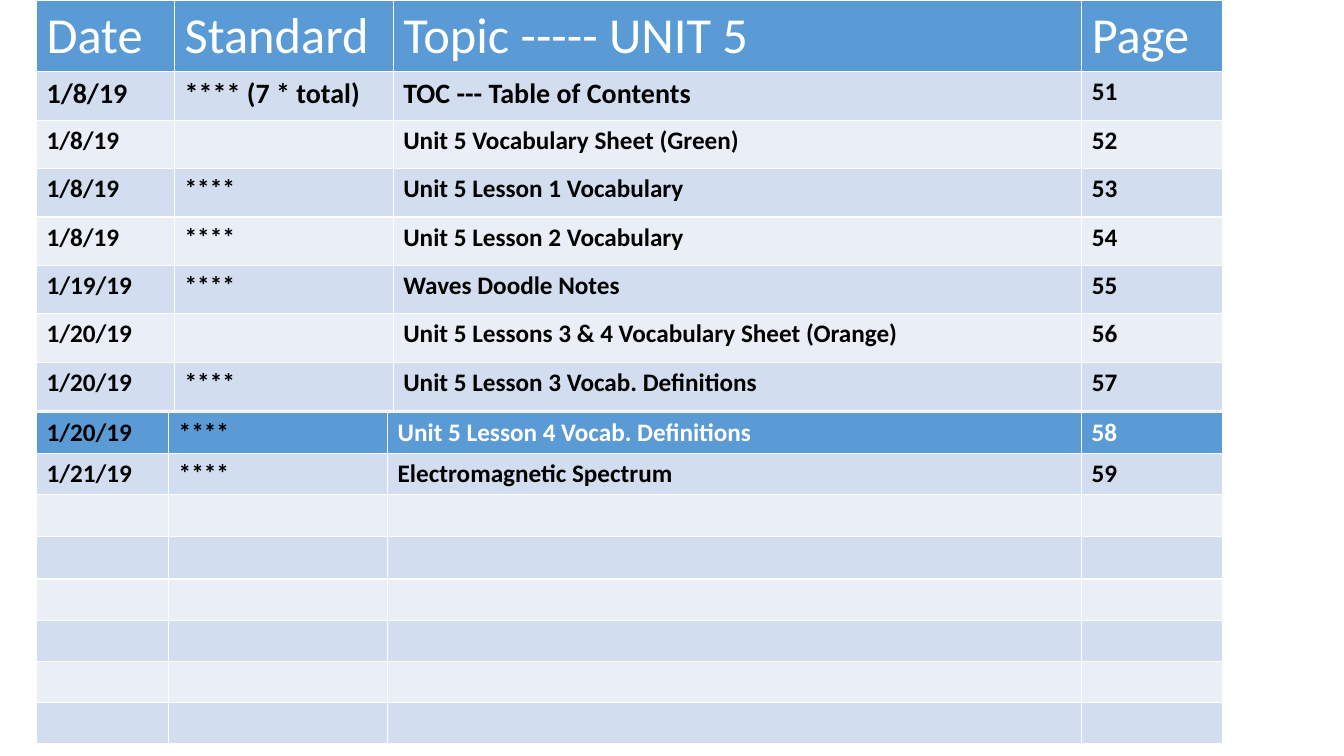
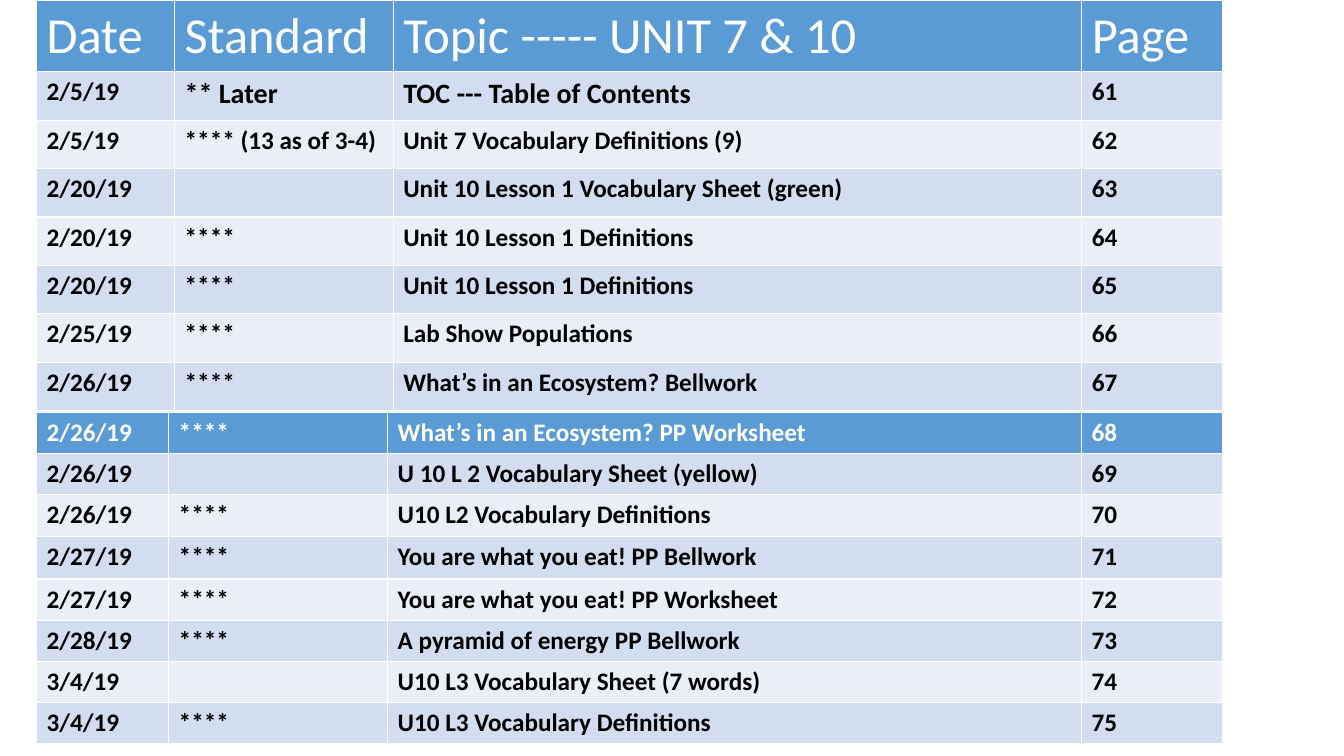
from lxml import etree
from pptx import Presentation
from pptx.dml.color import RGBColor
from pptx.oxml import ns
from pptx.util import Cm, Pt

# Shared look
FONT = "Calibri"
WHITE = RGBColor(0xFF, 0xFF, 0xFF)
BLACK = RGBColor(0x00, 0x00, 0x00)
HEADER_BLUE = RGBColor(0x5B, 0x9B, 0xD5)
BANDS = (RGBColor(0xD2, 0xDE, 0xEF), RGBColor(0xEA, 0xEF, 0xF7))
HEADING_SIZE, LEAD_SIZE, ENTRY_SIZE = 36, 20, 18
BORDER = Pt(1)

# Shared layout, in centimetres
LEFT = 0.92
UPPER = {"top": 0, "columns": (3.48, 5.51, 17.35, 3.56),
         "rows": [1.78] + [1.22] * 8}
LOWER = {"top": 10.39, "columns": (3.33, 5.52, 17.49, 3.56),
         "rows": [1.04] * 3 + [1.08] + [1.04] * 4}
UPPER_ENTRIES = 7

# Content: entries are (date, standard, topic), pages count up from first_page;
# lead_cells are the larger cells of the first entry,
# dark_cells the black ones in the lower table's blue row
UNITS = [
    {
        "title": "Topic ----- UNIT 5",
        "first_page": 51,
        "lead_cells": (0, 1, 2),
        "dark_cells": (0, 1),
        "entries": [
            ("1/8/19", "**** (7 * total)", "TOC --- Table of Contents"),
            ("1/8/19", "", "Unit 5 Vocabulary Sheet (Green)"),
            ("1/8/19", "****", "Unit 5 Lesson 1 Vocabulary"),
            ("1/8/19", "****", "Unit 5 Lesson 2 Vocabulary"),
            ("1/19/19", "****", "Waves Doodle Notes"),
            ("1/20/19", "", "Unit 5 Lessons 3 & 4 Vocabulary Sheet (Orange)"),
            ("1/20/19", "****", "Unit 5 Lesson 3 Vocab. Definitions"),
            ("1/20/19", "****", "Unit 5 Lesson 4 Vocab. Definitions"),
            ("1/21/19", "****", "Electromagnetic Spectrum"),
        ],
    },
    {
        "title": "Topic ----- UNIT 7 & 10",
        "first_page": 61,
        "lead_cells": (1, 2),
        "dark_cells": (),
        "entries": [
            ("2/5/19", "** Later", "TOC --- Table of Contents"),
            ("2/5/19", "**** (13 as of 3-4)", "Unit 7 Vocabulary Definitions (9)"),
            ("2/20/19", "", "Unit 10 Lesson 1 Vocabulary Sheet (green)"),
            ("2/20/19", "****", "Unit 10 Lesson 1 Definitions"),
            ("2/20/19", "****", "Unit 10 Lesson 1 Definitions"),
            ("2/25/19", "****", "Lab Show Populations"),
            ("2/26/19", "****", "What’s in an Ecosystem? Bellwork"),
            ("2/26/19", "****", "What’s in an Ecosystem? PP Worksheet"),
            ("2/26/19", "", "U 10 L 2 Vocabulary Sheet (yellow)"),
            ("2/26/19", "****", "U10 L2 Vocabulary Definitions"),
            ("2/27/19", "****", "You are what you eat! PP Bellwork"),
            ("2/27/19", "****", "You are what you eat! PP Worksheet"),
            ("2/28/19", "****", "A pyramid of energy PP Bellwork"),
            ("3/4/19", "", "U10 L3 Vocabulary Sheet (7 words)"),
            ("3/4/19", "****", "U10 L3 Vocabulary Definitions"),
        ],
    },
]


def add_borders(cell):
    properties = cell._tc.get_or_add_tcPr()
    for side in "LRTB":
        line = etree.SubElement(properties, ns.qn(f"a:ln{side}"), w=str(int(BORDER)))
        fill = etree.SubElement(line, ns.qn("a:solidFill"))
        etree.SubElement(fill, ns.qn("a:srgbClr"), val=str(WHITE))


def write_cell(cell, words, size, color, bold):
    paragraph = cell.text_frame.paragraphs[0]
    paragraph.text = words
    for run in paragraph.runs:
        run.font.name = FONT
        run.font.size = Pt(size)
        run.font.bold = bold
        run.font.color.rgb = color


def add_listing(slide, layout, rows, text_style):
    """Draw one table; text_style(row, column) gives size, colour and bold."""
    widths, heights = layout["columns"], layout["rows"]
    listing = slide.shapes.add_table(
        len(heights), len(widths), Cm(LEFT), Cm(layout["top"]),
        Cm(sum(widths)), Cm(sum(heights))).table
    listing.first_row = listing.horz_banding = False
    for column, width in zip(listing.columns, widths):
        column.width = Cm(width)
    for r, height in enumerate(heights):
        listing.rows[r].height = Cm(height)
        for c in range(len(widths)):
            cell = listing.cell(r, c)
            add_borders(cell)
            cell.fill.solid()
            cell.fill.fore_color.rgb = BANDS[(r - 1) % 2] if r else HEADER_BLUE
            if r < len(rows) and rows[r][c]:
                write_cell(cell, rows[r][c], *text_style(r, c))


def add_contents_slide(deck, unit):
    slide = deck.slides.add_slide(deck.slide_layouts[6])
    entries = [(*entry, str(page))
               for page, entry in enumerate(unit["entries"], unit["first_page"])]

    def upper_style(r, c):
        if r == 0:
            return HEADING_SIZE, WHITE, False
        is_lead = r == 1 and c in unit["lead_cells"]
        return LEAD_SIZE if is_lead else ENTRY_SIZE, BLACK, True

    def lower_style(r, c):
        is_dark = r > 0 or c in unit["dark_cells"]
        return ENTRY_SIZE, BLACK if is_dark else WHITE, True

    # Headings and first entries, then the remaining entries over the last row
    headings = ("Date", "Standard", unit["title"], "Page")
    add_listing(slide, UPPER, [headings] + entries[:UPPER_ENTRIES], upper_style)
    add_listing(slide, LOWER, entries[UPPER_ENTRIES:], lower_style)


def main():
    deck = Presentation()
    deck.slide_width, deck.slide_height = Cm(33.87), Cm(19.05)
    for unit in UNITS:
        add_contents_slide(deck, unit)
    deck.save("out.pptx")


if __name__ == "__main__":
    main()
